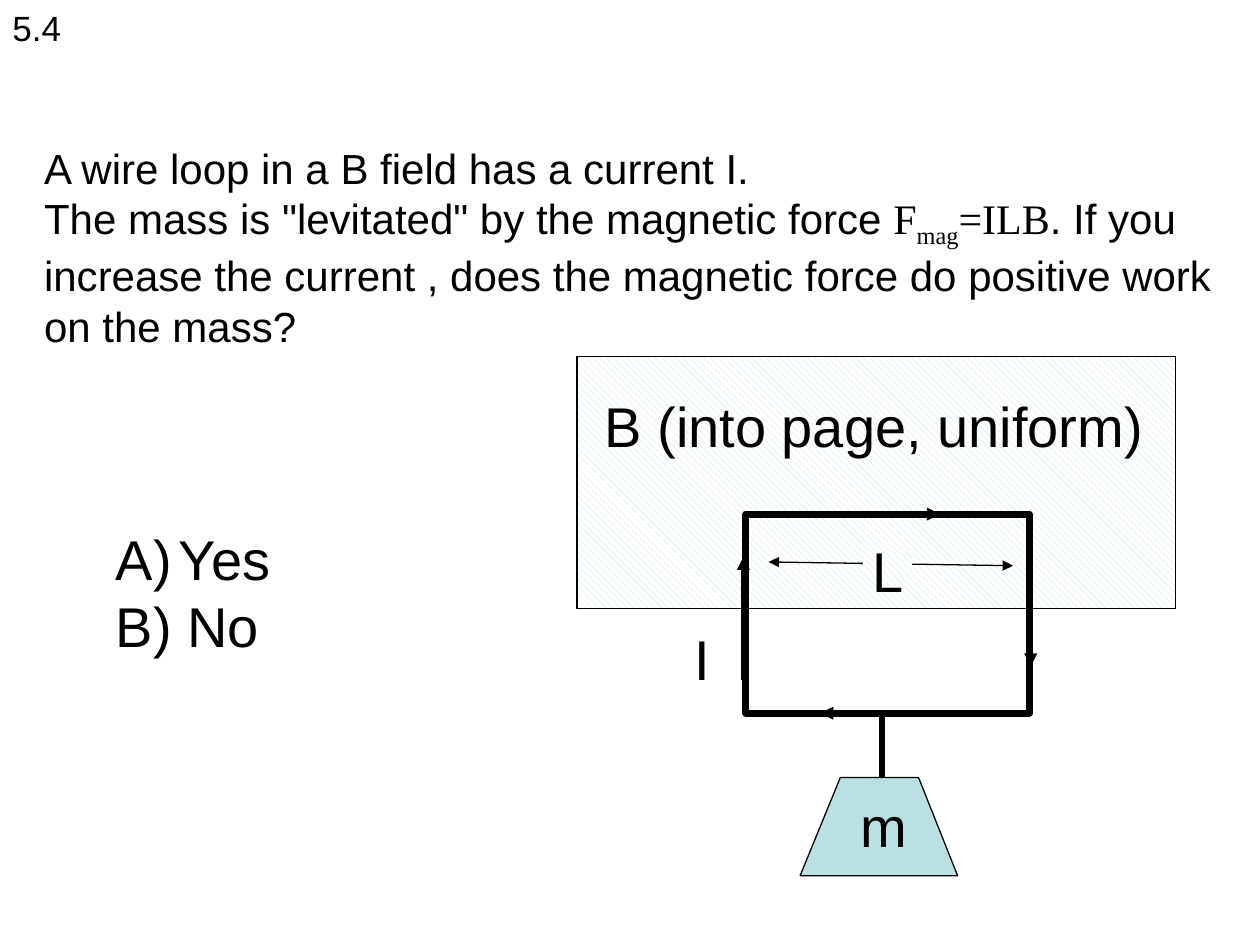
from dataclasses import dataclass

from lxml.etree import SubElement
from pptx import Presentation
from pptx.dml.color import RGBColor
from pptx.enum.dml import MSO_PATTERN
from pptx.enum.shapes import MSO_CONNECTOR, MSO_SHAPE
from pptx.enum.text import MSO_ANCHOR, MSO_AUTO_SIZE, PP_ALIGN
from pptx.oxml.ns import qn
from pptx.util import Inches, Pt


@dataclass(frozen=True)
class Theme:
    ink: RGBColor = RGBColor(0, 0, 0)
    paper: RGBColor = RGBColor(255, 255, 255)
    tint: RGBColor = RGBColor(0xBB, 0xE0, 0xE3)
    sans: str = "Arial"
    serif: str = "Times New Roman"
    number: int = 20
    question: int = 24
    large: int = 32
    thin: float = 0.75
    arrow: float = 2.5
    stem: float = 3
    loop: float = 4


THEME = Theme()


@dataclass(frozen=True)
class Box:
    left: float
    top: float
    width: float
    height: float

    def lengths(self):
        return [Inches(value) for value in (self.left, self.top, self.width, self.height)]


@dataclass(frozen=True)
class Label:
    text: str
    box: Box
    size: int = THEME.large


@dataclass(frozen=True)
class Line:
    start: tuple
    end: tuple
    width: float = THEME.arrow
    arrowheads: tuple = ("tailEnd",)


def add_text(paragraph, text: str, *, size: int = THEME.large, font: str = THEME.sans, baseline: int = 0):
    """Append a formatted run to a paragraph."""
    run = paragraph.add_run()
    run.text = text
    run.font.size = Pt(size)
    run.font.name = font
    run.font.color.rgb = THEME.ink
    if baseline:
        run.font._element.set("baseline", str(baseline * 1000))


def place(shape, box: Box):
    """Move and resize a placeholder."""
    shape.left, shape.top, shape.width, shape.height = box.lengths()


def add_label(slide, label: Label):
    """Add an unwrapped text label."""
    frame = slide.shapes.add_textbox(*label.box.lengths()).text_frame
    frame.word_wrap = False
    frame.auto_size = MSO_AUTO_SIZE.SHAPE_TO_FIT_TEXT
    add_text(frame.paragraphs[0], label.text, size=label.size)


def outline(shape, width: float):
    """Give a shape a plain dark outline without a shadow."""
    shape.shadow.inherit = False
    shape.line.color.rgb = THEME.ink
    shape.line.width = Pt(width)


def add_hatched(slide, box: Box):
    """Add a rectangle with the hatching of the magnetic field."""
    shape = slide.shapes.add_shape(MSO_SHAPE.RECTANGLE, *box.lengths())
    shape.fill.patterned()
    shape.fill.pattern = MSO_PATTERN.WIDE_DOWNWARD_DIAGONAL
    shape.fill.fore_color.rgb = THEME.tint
    shape.fill.back_color.rgb = THEME.paper
    shape.shadow.inherit = False
    shape.line.fill.background()
    return shape


def add_line(slide, line: Line):
    """Add a straight line with its arrowheads."""
    points = [Inches(value) for value in line.start + line.end]
    connector = slide.shapes.add_connector(MSO_CONNECTOR.STRAIGHT, *points)
    connector.line.color.rgb = THEME.ink
    connector.line.width = Pt(line.width)
    properties = connector._element.spPr
    for end in line.arrowheads:
        SubElement(properties.find(qn("a:ln")), qn(f"a:{end}"), type="triangle")
    SubElement(properties, qn("a:effectLst"))


def add_question(title):
    """Write the question in the title placeholder."""
    place(title, Box(0.25, 1.33, 9.75, 1.25))
    frame = title.text_frame
    frame.word_wrap = True
    frame.auto_size = MSO_AUTO_SIZE.NONE
    frame.vertical_anchor = MSO_ANCHOR.MIDDLE
    paragraph = frame.paragraphs[0]
    paragraph.alignment = PP_ALIGN.LEFT
    size = THEME.question
    add_text(paragraph, "A wire loop in a B field has a current I. ", size=size)
    paragraph.add_line_break()
    add_text(paragraph, 'The mass is "levitated" by the magnetic force ', size=size)
    for text, baseline in (("F", 0), ("mag", -25), ("=ILB", 0)):
        add_text(paragraph, text, size=size, font=THEME.serif, baseline=baseline)
    add_text(paragraph, ". If you increase the current , does the magnetic force do positive work on the mass?", size=size)


def add_answers(body):
    """Write the two answers in the body placeholder."""
    place(body, Box(0.82, 4.11, 1.47, 1.17))
    frame = body.text_frame
    frame.word_wrap = False
    frame.auto_size = MSO_AUTO_SIZE.SHAPE_TO_FIT_TEXT
    for index, (text, numbered) in enumerate((("Yes", True), ("B) No", False))):
        paragraph = frame.add_paragraph() if index else frame.paragraphs[0]
        paragraph.space_before = Pt(0)
        properties = paragraph._p.get_or_add_pPr()
        properties.set("marL", str(Inches(0.5)))
        properties.set("indent", str(Inches(-0.5)))
        if numbered:
            SubElement(properties, qn("a:buFont"), typeface=THEME.sans)
            SubElement(properties, qn("a:buAutoNum"), type="alphaUcParenR")
        else:
            SubElement(properties, qn("a:buNone"))
        add_text(paragraph, text)


def add_mass(slide):
    """Draw the hanging mass."""
    builder = slide.shapes.build_freeform(Inches(6.35), Inches(6.95))
    corners = ((6.67, 6.17), (7.29, 6.17), (7.6, 6.95))
    builder.add_line_segments([(Inches(x), Inches(y)) for x, y in corners], close=True)
    mass = builder.convert_to_shape()
    mass.fill.solid()
    mass.fill.fore_color.rgb = THEME.tint
    outline(mass, THEME.thin)


def main():
    """Build and save the slide."""
    presentation = Presentation()
    presentation.slide_width, presentation.slide_height = Inches(10), Inches(7.5)
    slide = presentation.slides.add_slide(presentation.slide_layouts[1])
    add_question(slide.shapes.title)
    add_answers(slide.placeholders[1])

    outline(add_hatched(slide, Box(4.58, 2.83, 4.75, 2)), THEME.thin)
    add_label(slide, Label("B (into page, uniform)", Box(4.7, 3.06, 4.48, 0.63)))
    loop = slide.shapes.add_shape(MSO_SHAPE.RECTANGLE, *Box(5.92, 4.08, 2.25, 1.58).lengths())
    loop.fill.background()
    outline(loop, THEME.loop)
    add_line(slide, Line((7, 5.67), (7, 6.17), THEME.stem, ()))
    add_mass(slide)

    for label in (
        Label("I", Box(5.41, 4.91, 0.32, 0.63)),
        Label("m", Box(6.73, 6.23, 0.57, 0.63)),
        Label("5.4", Box(0, 0, 0.59, 0.43), THEME.number),
    ):
        add_label(slide, label)
    for line in (
        Line((5.9, 5.4), (5.9, 4.42)),
        Line((8.18, 4.31), (8.18, 5.29)),
        Line((7.49, 5.66), (6.51, 5.66)),
        Line((6.48, 4.08), (7.46, 4.08)),
        Line((6.1, 4.46), (8.04, 4.49), THEME.thin, ("headEnd", "tailEnd")),
    ):
        add_line(slide, line)
    add_hatched(slide, Box(6.85, 4.37, 0.39, 0.2))
    add_label(slide, Label("L", Box(6.83, 4.21, 0.45, 0.63)))
    presentation.save("out.pptx")


if __name__ == "__main__":
    main()
